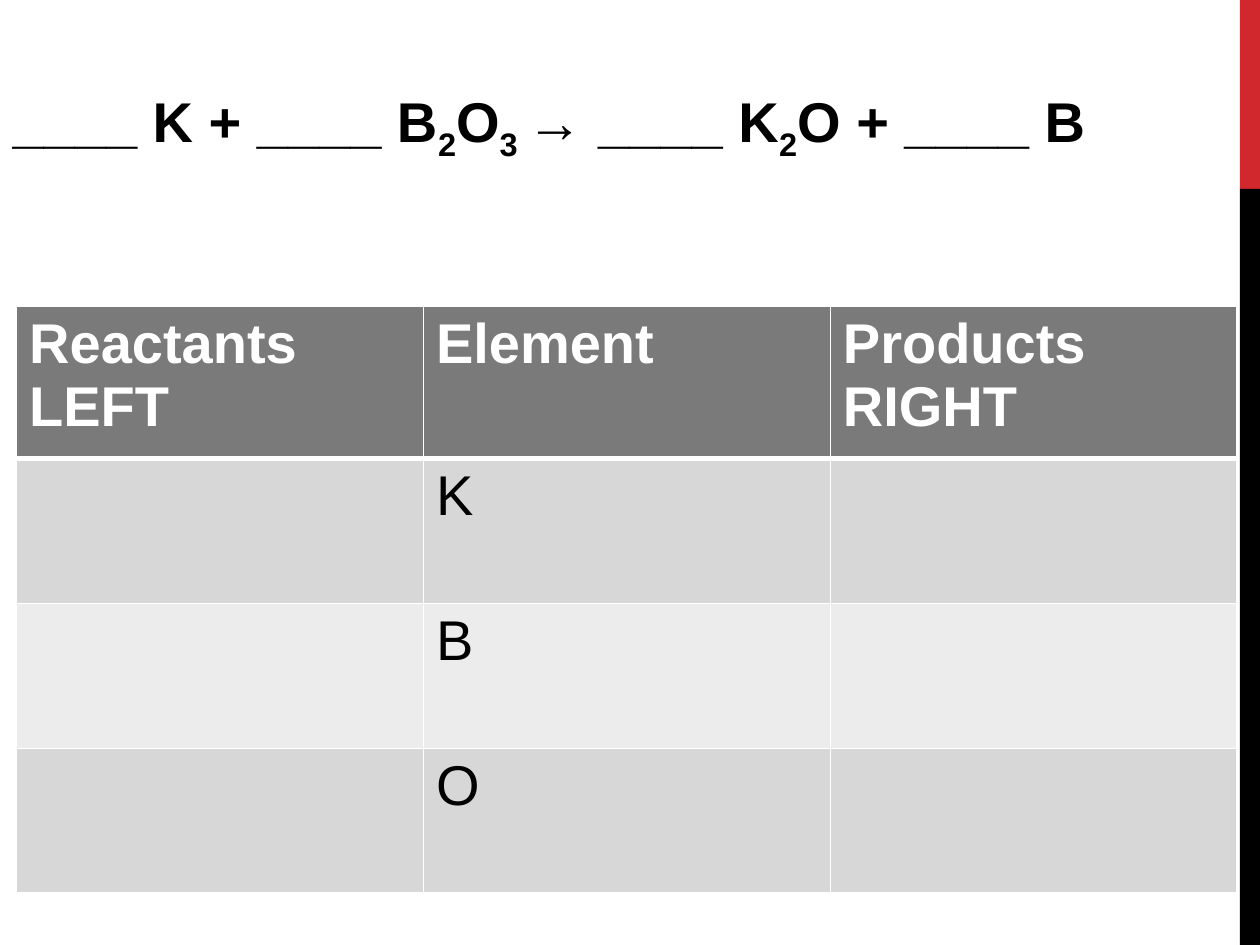
from lxml.etree import SubElement
from pptx import Presentation
from pptx.dml.color import RGBColor
from pptx.enum.shapes import MSO_SHAPE
from pptx.enum.text import MSO_ANCHOR, MSO_AUTO_SIZE, PP_ALIGN
from pptx.oxml.ns import qn
from pptx.util import Pt

COLORS = {
    "red": "D1282E",
    "black": "000000",
    "white": "FFFFFF",
    "header": "7A7A7A",
    "band_dark": "D7D7D7",
    "band_light": "ECECEC",
}
FONT = "Arial"
TEXT_SIZE = 32

# Subscripts are the odd pieces
EQUATION = ["____ K + ____ B", "2", "O", "3 ", "→ ____ K", "2", "O + ____ B"]
ROWS = [
    ["Reactants LEFT", "Element", "Products\nRIGHT"],
    ["", "K", ""],
    ["", "B", ""],
    ["", "O", ""],
]


def rgb(name):
    return RGBColor.from_string(COLORS[name])


def style_font(font, color, bold):
    font.name = FONT
    font.size = Pt(TEXT_SIZE)
    font.bold = bold
    font.color.rgb = rgb(color)


def add_side_bar(page, left, top, width, height):
    red_height = height / 5
    bands = [("red", top, red_height),
             ("black", top + red_height, height - red_height)]
    for color, band_top, band_height in bands:
        band = page.shapes.add_shape(
            MSO_SHAPE.RECTANGLE, Pt(left), Pt(band_top), Pt(width), Pt(band_height))
        band.shadow.inherit = False
        band.fill.solid()
        band.fill.fore_color.rgb = rgb(color)
        band.line.fill.background()


def fill_equation(body, left, top, width, height):
    body.left, body.top = Pt(left), Pt(top)
    body.width, body.height = Pt(width), Pt(height)
    frame = body.text_frame
    frame.word_wrap = True
    frame.auto_size = MSO_AUTO_SIZE.NONE
    frame.vertical_anchor = MSO_ANCHOR.TOP
    para = frame.paragraphs[0]
    para.alignment = PP_ALIGN.LEFT
    para.space_before = Pt(0)
    para.space_after = Pt(6)
    properties = para._p.get_or_add_pPr()
    properties.set("marL", "0")
    properties.set("indent", "0")
    SubElement(properties, qn("a:buNone"))
    style_font(para.font, "black", True)
    for index, piece in enumerate(EQUATION):
        span = para.add_run()
        span.text = piece
        if index % 2:
            span.font._element.set("baseline", "-25000")


def set_borders(cell, widths):
    properties = cell._tc.get_or_add_tcPr()
    for side, width in zip("LRTB", widths):
        line = SubElement(properties, qn(f"a:ln{side}"), w=str(Pt(width)))
        fill = SubElement(line, qn("a:solidFill"))
        SubElement(fill, qn("a:srgbClr"), val=COLORS["white"])


def add_tally_table(page, left, top, width, header_height, row_height):
    height = header_height + row_height * (len(ROWS) - 1)
    table = page.shapes.add_table(
        len(ROWS), len(ROWS[0]), Pt(left), Pt(top), Pt(width), Pt(height)).table
    for column in table.columns:
        column.width = Pt(width / len(ROWS[0]))
    for row_index, texts in enumerate(ROWS):
        is_header = row_index == 0
        table.rows[row_index].height = Pt(header_height if is_header else row_height)
        band = "band_dark" if row_index % 2 else "band_light"
        top_width = 3 if row_index == 1 else 1
        bottom_width = 3 if is_header else 1
        for column_index, text in enumerate(texts):
            cell = table.cell(row_index, column_index)
            set_borders(cell, (1, 1, top_width, bottom_width))
            cell.fill.solid()
            cell.fill.fore_color.rgb = rgb("header" if is_header else band)
            cell.text = text
            for para in cell.text_frame.paragraphs:
                style_font(para.font, "white" if is_header else "black", is_header)


def main():
    deck = Presentation()
    deck.slide_width, deck.slide_height = Pt(720), Pt(540)
    page = deck.slides.add_slide(deck.slide_layouts[1])
    title = page.shapes.title
    title._element.getparent().remove(title._element)

    # Red and black bar on the right edge
    add_side_bar(page, 708.5, 0, 11.5, 540)
    # Equation to balance
    fill_equation(page.placeholders[1], 0, 46, 706, 464)
    # Atom count for each element
    add_tally_table(page, 9.5, 175, 697.5, 87, 82.8)

    deck.save("out.pptx")


if __name__ == "__main__":
    main()
